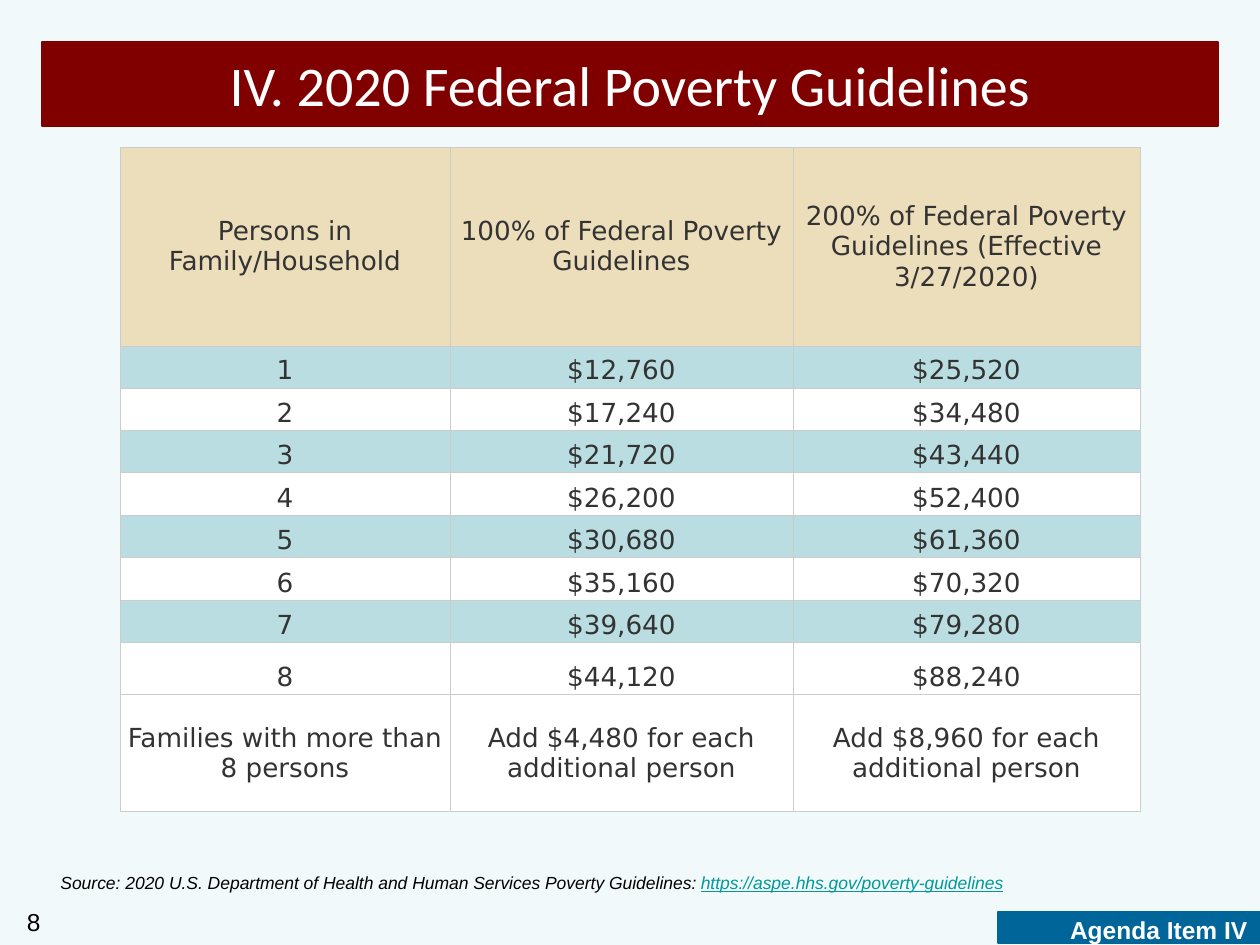
from lxml import etree
from pptx import Presentation
from pptx import util as u
from pptx.dml import color
from pptx.enum import shapes, text
from pptx.oxml import ns

PX_PER_INCH = 126
CENTER, RIGHT = text.PP_ALIGN.CENTER, text.PP_ALIGN.RIGHT
TOP, MIDDLE, BOTTOM = text.MSO_ANCHOR.TOP, text.MSO_ANCHOR.MIDDLE, text.MSO_ANCHOR.BOTTOM
HEADER_FILL, BAND_FILL, PLAIN_FILL = "ECDEBA", "BADDE1", "FFFFFF"
COLUMN_WIDTHS = [330, 343, 347]
ROW_HEIGHTS = [199, 42, 43, 42, 43, 42, 43, 42, 52, 117]
GUIDELINES = [
    ("Persons in Family/Household", "100% of Federal Poverty Guidelines",
     "200% of Federal Poverty Guidelines (Effective 3/27/2020)"),
    ("1", "$12,760", "$25,520"),
    ("2", "$17,240", "$34,480"),
    ("3", "$21,720", "$43,440"),
    ("4", "$26,200", "$52,400"),
    ("5", "$30,680", "$61,360"),
    ("6", "$35,160", "$70,320"),
    ("7", "$39,640", "$79,280"),
    ("8", "$44,120", "$88,240"),
    ("Families with more than 8 persons", "Add $4,480 for each additional person",
     "Add $8,960 for each additional person"),
]


def px(length):
    """Convert pixels to EMU."""
    return u.Inches(length / PX_PER_INCH)


def rgb(value):
    """Return the colour for a hex string."""
    return color.RGBColor.from_string(value)


def style(paragraph, size, name, hex_color, align=None):
    """Set the font and alignment of a paragraph."""
    paragraph.alignment = align
    font = paragraph.font
    font.size, font.name = u.Pt(size), name
    font.color.rgb = rgb(hex_color)


def add_bar(slide, box, wording, fill, anchor):
    """Add a filled rectangle and return its paragraph."""
    shape = slide.shapes.add_shape(shapes.MSO_SHAPE.RECTANGLE, *map(px, box))
    shape.shadow.inherit = False
    shape.fill.solid()
    shape.fill.fore_color.rgb = rgb(fill)
    shape.line.color.rgb = rgb(fill)
    shape.line.width = u.Pt(0.75)
    shape.text_frame.word_wrap = True
    shape.text_frame.vertical_anchor = anchor
    paragraph = shape.text_frame.paragraphs[0]
    paragraph.text = wording
    return paragraph


def add_label(slide, box, anchor):
    """Add a wrapping text box and return its paragraph."""
    frame = slide.shapes.add_textbox(*map(px, box)).text_frame
    frame.word_wrap = True
    frame.vertical_anchor = anchor
    return frame.paragraphs[0]


def add_title(slide, box):
    """Add the title band."""
    paragraph = add_bar(slide, box, "IV. 2020 Federal Poverty Guidelines", "800000", MIDDLE)
    style(paragraph, 32, "Calibri", "FFFFFF", CENTER)


def add_borders(cell, hex_color, width):
    """Draw a line on all four sides of a cell."""
    properties = cell._tc.get_or_add_tcPr()
    for index, side in enumerate(("a:lnL", "a:lnR", "a:lnT", "a:lnB")):
        line = etree.Element(ns.qn(side), w=str(u.Pt(width)))
        fill = etree.SubElement(line, ns.qn("a:solidFill"))
        etree.SubElement(fill, ns.qn("a:srgbClr"), val=hex_color)
        properties.insert(index, line)


def fill_cell(cell, wording, fill, anchor):
    """Write and format one table cell."""
    cell.text = wording
    cell.vertical_anchor = anchor
    cell.margin_left = cell.margin_right = cell.margin_top = cell.margin_bottom = px(2)
    cell.fill.solid()
    cell.fill.fore_color.rgb = rgb(fill)
    add_borders(cell, "CCCCCC", 0.5)
    style(cell.text_frame.paragraphs[0], 15, "DejaVu Sans", "333333", CENTER)


def add_guidelines(slide, left, top):
    """Add the poverty guidelines table."""
    box = (left, top, sum(COLUMN_WIDTHS), sum(ROW_HEIGHTS))
    table = slide.shapes.add_table(len(ROW_HEIGHTS), len(COLUMN_WIDTHS), *map(px, box)).table
    for column, width in zip(table.columns, COLUMN_WIDTHS):
        column.width = px(width)
    last = len(GUIDELINES) - 1
    for index, (row, height, entries) in enumerate(zip(table.rows, ROW_HEIGHTS, GUIDELINES)):
        row.height = px(height)
        banded = index % 2 and index < last
        fill = HEADER_FILL if index == 0 else BAND_FILL if banded else PLAIN_FILL
        anchor = MIDDLE if index in (0, last) else BOTTOM
        for cell, wording in zip(row.cells, entries):
            fill_cell(cell, wording, fill, anchor)


def add_source(slide, box):
    """Add the source line with its web address."""
    paragraph = add_label(slide, box, TOP)
    style(paragraph, 10, "Arial", "000000")
    paragraph.font.italic = True
    paragraph.add_run().text = (
        "Source: 2020 U.S. Department of Health and Human Services Poverty Guidelines: ")
    address = paragraph.add_run()
    address.text = "https://aspe.hhs.gov/poverty-guidelines"
    address.font.underline = True
    address.font.color.rgb = rgb("009999")


def add_agenda_tag(slide, box):
    """Add the agenda item tag."""
    paragraph = add_bar(slide, box, "Agenda Item IV", "006699", TOP)
    style(paragraph, 14, "Arial", "FFFFFF", RIGHT)
    paragraph.font.bold = True
    paragraph.line_spacing = 0.9
    paragraph.space_before = u.Pt(2.8)


def add_page_number(slide, box):
    """Add the page number."""
    paragraph = add_label(slide, box, MIDDLE)
    paragraph.text = "8"
    style(paragraph, 14, "Arial", "000000", RIGHT)


def main():
    """Build and save the slide."""
    presentation = Presentation()
    presentation.slide_width, presentation.slide_height = px(1260), px(945)
    slide = presentation.slides.add_slide(presentation.slide_layouts[6])
    slide.background.fill.solid()
    slide.background.fill.fore_color.rgb = rgb("F2F9FA")
    add_title(slide, (42, 42, 1176, 84))
    add_source(slide, (48, 866, 1165, 34))
    add_guidelines(slide, 120, 147)
    add_agenda_tag(slide, (998, 912, 262, 31))
    add_page_number(slide, (-31, 898, 84, 47))
    presentation.save("out.pptx")


if __name__ == "__main__":
    main()
